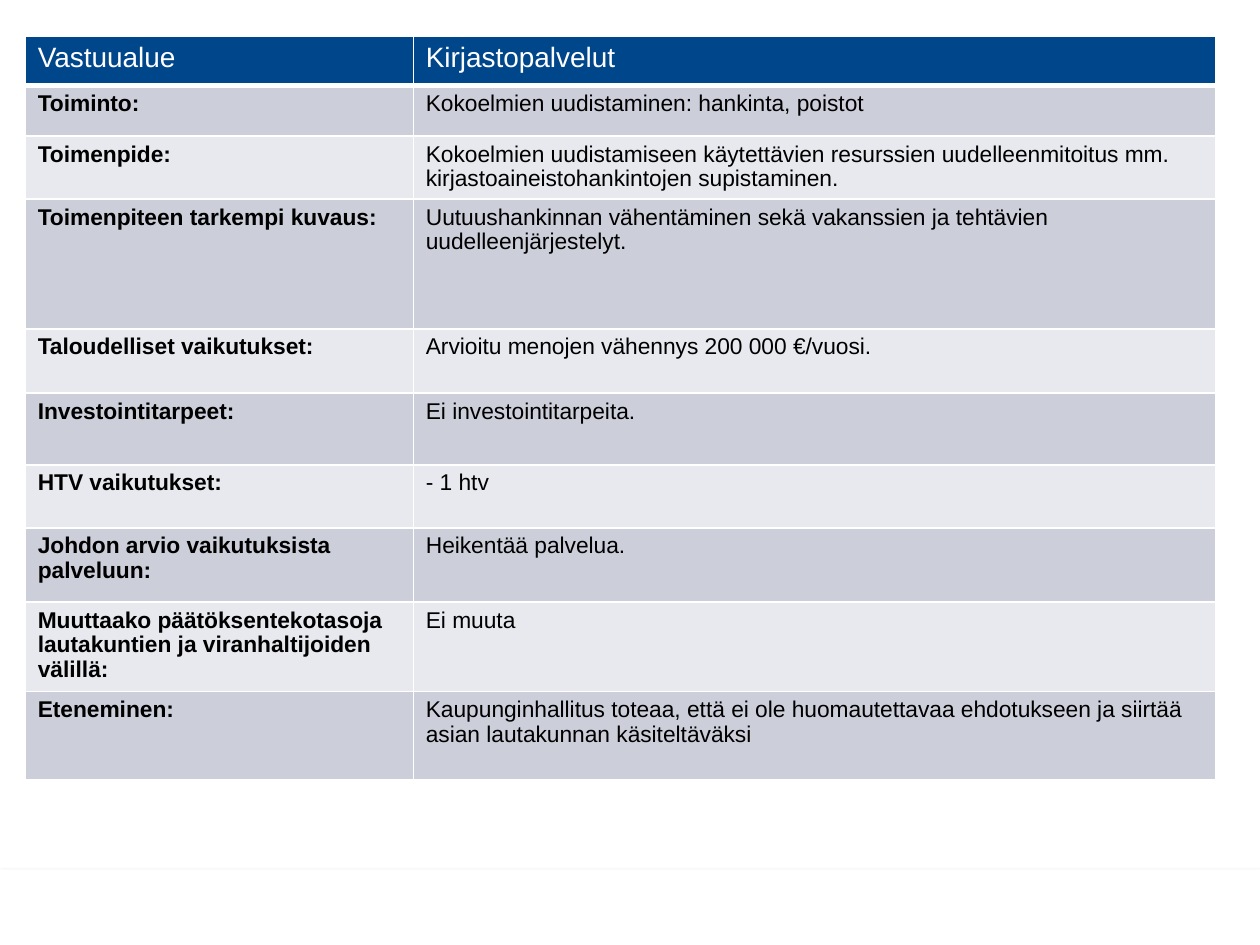
from dataclasses import dataclass

from lxml import etree
from pptx import Presentation
from pptx.dml.color import RGBColor
from pptx.enum.shapes import MSO_SHAPE
from pptx.oxml.ns import qn
from pptx.util import Inches, Pt

RECTANGLE = MSO_SHAPE.RECTANGLE
BLANK_LAYOUT = 6


@dataclass(frozen=True)
class Theme:
    font: str = "Arial"
    header_size: float = 16
    body_size: float = 13
    line_spacing: float = 0.97
    white: str = "FFFFFF"
    black: str = "000000"
    header_fill: str = "00468B"
    bands: tuple = ("CCCFDA", "E7E9EE")
    border: float = 1
    header_border: float = 3


THEME = Theme()

COLUMN_WIDTHS = (3.08, 6.37)

# Row height in inches, label, content; the first row is the header
ROWS = (
    (0.39, "Vastuualue", "Kirjastopalvelut"),
    (0.4, "Toiminto:", "Kokoelmien uudistaminen: hankinta, poistot"),
    (0.5, "Toimenpide:",
     "Kokoelmien uudistamiseen käytettävien resurssien uudelleenmitoitus mm. "
     "kirjastoaineistohankintojen supistaminen."),
    (1.03, "Toimenpiteen tarkempi kuvaus:",
     "Uutuushankinnan vähentäminen sekä vakanssien ja tehtävien "
     "uudelleenjärjestelyt."),
    (0.51, "Taloudelliset vaikutukset:",
     "Arvioitu menojen vähennys 200 000 €/vuosi."),
    (0.57, "Investointitarpeet:", "Ei investointitarpeita."),
    (0.5, "HTV vaikutukset:", "- 1 htv"),
    (0.59, "Johdon arvio vaikutuksista palveluun:", "Heikentää palvelua."),
    (0.71, "Muuttaako päätöksentekotasoja lautakuntien ja viranhaltijoiden välillä:",
     "Ei muuta"),
    (0.7, "Eteneminen:",
     "Kaupunginhallitus toteaa, että ei ole huomautettavaa ehdotukseen ja siirtää "
     "asian lautakunnan käsiteltäväksi"),
)


def add_color(parent, color):
    fill = etree.SubElement(parent, qn("a:solidFill"))
    return etree.SubElement(fill, qn("a:srgbClr"), val=color)


def set_borders(cell, bottom_width):
    """Draw white lines on all four sides; borders precede the cell fill."""
    properties = cell._tc.get_or_add_tcPr()
    widths = {"lnL": THEME.border, "lnR": THEME.border,
              "lnT": THEME.border, "lnB": bottom_width}
    for side, width in widths.items():
        line = etree.SubElement(properties, qn(f"a:{side}"), w=str(Pt(width)))
        add_color(line, THEME.white)


def fill_cell(cell, text, row, column):
    header = row == 0
    set_borders(cell, THEME.header_border if header else THEME.border)
    cell.fill.solid()
    fill = THEME.header_fill if header else THEME.bands[(row - 1) % 2]
    cell.fill.fore_color.rgb = RGBColor.from_string(fill)

    para = cell.text_frame.paragraphs[0]
    para.text = text
    para.line_spacing = THEME.line_spacing
    para.font.name = THEME.font
    para.font.size = Pt(THEME.header_size if header else THEME.body_size)
    para.font.bold = column == 0 and not header
    color = THEME.white if header else THEME.black
    para.font.color.rgb = RGBColor.from_string(color)


def add_measure_table(page, left, top):
    width = Inches(sum(COLUMN_WIDTHS))
    height = Inches(sum(row[0] for row in ROWS))
    table = page.shapes.add_table(
        len(ROWS), len(COLUMN_WIDTHS), left, top, width, height).table
    table.horz_banding = False
    for column, column_width in zip(table.columns, COLUMN_WIDTHS):
        column.width = Inches(column_width)
    for row, (row_height, *texts) in enumerate(ROWS):
        table.rows[row].height = Inches(row_height)
        for column, text in enumerate(texts):
            fill_cell(table.cell(row, column), text, row, column)


def add_footer_band(page, left, top, width, height):
    band = page.shapes.add_shape(RECTANGLE, left, top, width, height)
    band.fill.solid()
    band.fill.fore_color.rgb = RGBColor.from_string(THEME.white)
    band.line.fill.background()
    # Soft shadow falling straight down
    band.shadow.inherit = False
    effects = band._element.spPr.find(qn("a:effectLst"))
    shadow = etree.SubElement(
        effects, qn("a:outerShdw"), blurRad=str(Pt(3.1)), dist=str(Pt(1.8)),
        dir="5400000", rotWithShape="0")
    etree.SubElement(add_shadow_color(shadow), qn("a:alpha"), val="35000")


def add_shadow_color(shadow):
    return etree.SubElement(shadow, qn("a:srgbClr"), val=THEME.black)


def main():
    deck = Presentation()
    deck.slide_width, deck.slide_height = Inches(10), Inches(7.5)
    page = deck.slides.add_slide(deck.slide_layouts[BLANK_LAYOUT])

    # Footer band takes the lowest 8 % of the page
    band_height = int(deck.slide_height * 0.08)
    add_footer_band(page, 0, deck.slide_height - band_height,
                    deck.slide_width, band_height)
    add_measure_table(page, Inches(0.2), Inches(0.29))
    deck.save("out.pptx")


if __name__ == "__main__":
    main()
